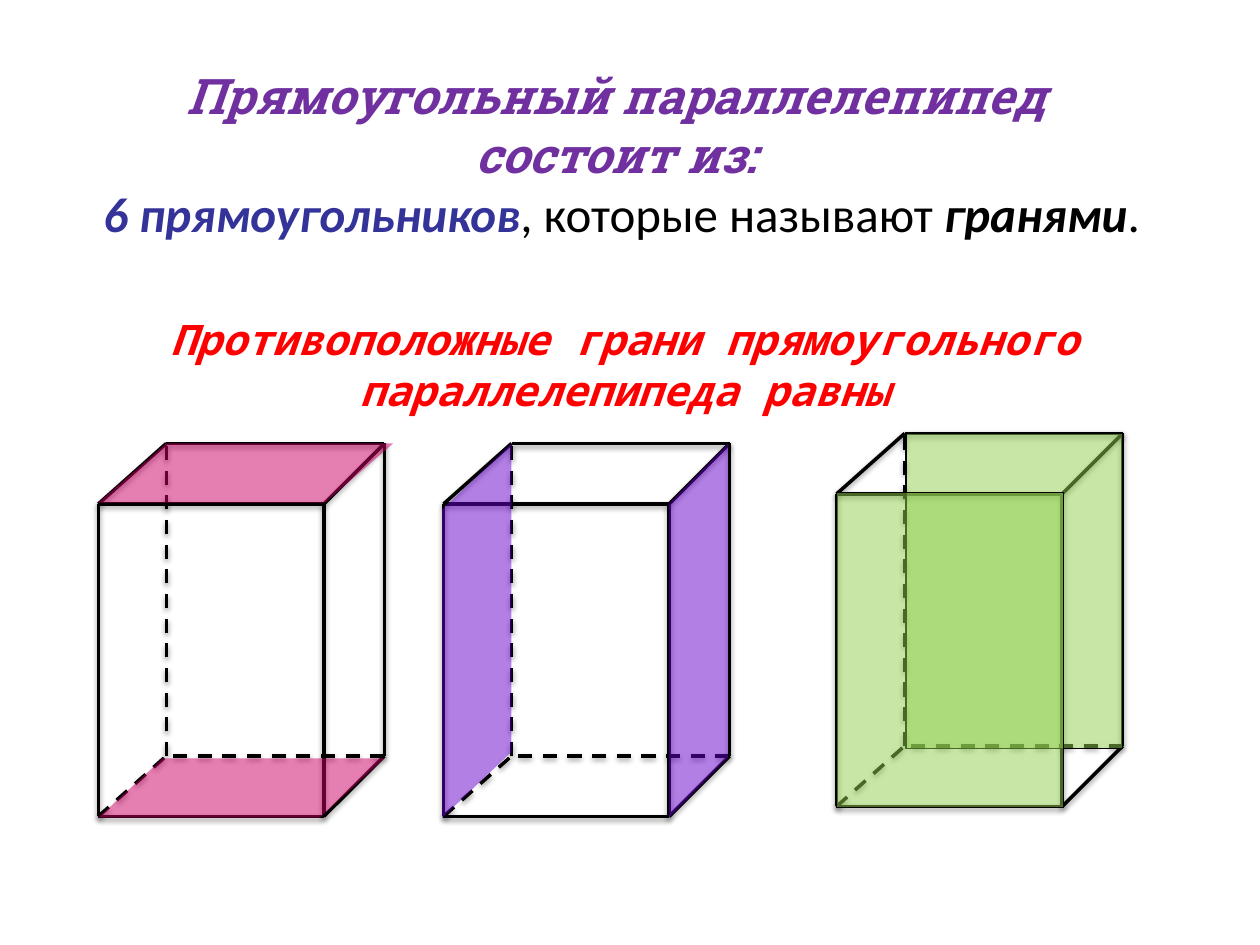
from lxml.etree import SubElement
from pptx import Presentation
from pptx.dml.color import RGBColor
from pptx.enum.dml import MSO_LINE
from pptx.enum.shapes import MSO_CONNECTOR, MSO_SHAPE
from pptx.enum.text import MSO_ANCHOR, MSO_AUTO_SIZE, PP_ALIGN
from pptx.oxml.ns import qn
from pptx.util import Inches, Pt

BLACK = RGBColor(0x00, 0x00, 0x00)
PURPLE = RGBColor(0x70, 0x30, 0xA0)
NAVY = RGBColor(0x33, 0x33, 0x99)
RED = RGBColor(0xFF, 0x00, 0x00)
PINK = RGBColor(0xCC, 0x00, 0x66)
VIOLET = RGBColor(0x66, 0x00, 0xCC)
GREEN = RGBColor(0x92, 0xD0, 0x50)

FRONT_W, FULL_W, SHIFT = 1.79, 2.27, 0.54
DEPTH, HEIGHT = 0.48, 2.48
VERTICES = {
    "front_top_left": (0, DEPTH),
    "front_top_right": (FRONT_W, DEPTH),
    "front_bottom_left": (0, DEPTH + HEIGHT),
    "front_bottom_right": (FRONT_W, DEPTH + HEIGHT),
    "back_top_left": (SHIFT, 0),
    "back_top_right": (FULL_W, 0),
    "back_bottom_left": (SHIFT, HEIGHT),
    "back_bottom_right": (FULL_W, HEIGHT),
}
SOLID_EDGES = [
    ("front_bottom_left", "front_top_left"),
    ("front_bottom_left", "front_bottom_right"),
    ("front_bottom_right", "front_top_right"),
    ("front_top_left", "front_top_right"),
    ("front_top_left", "back_top_left"),
    ("back_top_left", "back_top_right"),
    ("front_top_right", "back_top_right"),
    ("front_bottom_right", "back_bottom_right"),
    ("back_top_right", "back_bottom_right"),
]
HIDDEN_EDGES = [
    ("back_bottom_right", "back_bottom_left"),
    ("front_bottom_left", "back_bottom_left"),
    ("back_bottom_left", "back_top_left"),
]


def fill_text(sp, box, paragraphs):
    """Place a text shape and write centred paragraphs of (text, font values) runs."""
    sp.left, sp.top, sp.width, sp.height = map(Inches, box)
    tf = sp.text_frame
    frame_format = {"word_wrap": True, "vertical_anchor": MSO_ANCHOR.TOP,
                    "auto_size": MSO_AUTO_SIZE.SHAPE_TO_FIT_TEXT}
    for name, value in frame_format.items():
        setattr(tf, name, value)
    for i, runs in enumerate(paragraphs):
        p = tf.add_paragraph() if i else tf.paragraphs[0]
        p.alignment = PP_ALIGN.CENTER
        for text, color, font_format in runs:
            r = p.add_run()
            r.text = text
            r.font.color.rgb = color
            for name, value in font_format.items():
                setattr(r.font, name, value)


def add_heading(slide, box):
    """Write the title and the sentence on faces in the title placeholder."""
    plain = {"name": "Calibri", "size": Pt(28), "bold": False, "italic": False}
    strong = {**plain, "bold": True, "italic": True}
    fill_text(slide.shapes.title, box, [
        [("Прямоугольный параллелепипед состоит из:", PURPLE,
          {**strong, "name": "Roboto Slab"})],
        [(" ", BLACK, plain),
         ("6 прямоугольников", NAVY, strong),
         (", которые называют ", BLACK, plain),
         ("гранями", BLACK, strong),
         (".", BLACK, plain)],
    ])


def add_rule(slide, box):
    """Write the rule on opposite faces."""
    font_format = {"name": "Noto Sans Mono", "size": Pt(24), "bold": True, "italic": True}
    sp = slide.shapes.add_textbox(0, 0, 0, 0)
    fill_text(sp, box, [[
        ("Противоположные грани прямоугольного параллелепипеда равны", RED, font_format)]])


def add_shadow(sp):
    """Give a connector a soft black shadow below it."""
    effects = SubElement(sp._element.spPr, qn("a:effectLst"))
    shadow = SubElement(effects, qn("a:outerShdw"), blurRad=str(Pt(3.1)),
                        dist=str(Pt(1.6)), dir="5400000", rotWithShape="0")
    color = SubElement(shadow, qn("a:srgbClr"), val="000000")
    SubElement(color, qn("a:alpha"), val="38000")


def add_prism(slide, left, top):
    """Draw the twelve edges of a cuboid as one group."""
    group = slide.shapes.add_group_shape()
    for edges, dash in ((SOLID_EDGES, None), (HIDDEN_EDGES, MSO_LINE.DASH)):
        for start, end in edges:
            points = [Inches(origin + offset) for vertex in (start, end)
                      for origin, offset in zip((left, top), VERTICES[vertex])]
            edge = group.shapes.add_connector(MSO_CONNECTOR.STRAIGHT, *points)
            edge.line.color.rgb = BLACK
            edge.line.width = Pt(2)
            edge.line.dash_style = dash
            add_shadow(edge)


def add_face(slide, preset, box, color, slant=None, upright=False, outlined=False):
    """Add one half-transparent face, turned and mirrored when upright."""
    sp = slide.shapes.add_shape(preset, *map(Inches, box))
    sp.shadow.inherit = False
    sp.fill.solid()
    sp.fill.fore_color.rgb = color
    clr = sp._element.spPr.find(qn("a:solidFill")).find(qn("a:srgbClr"))
    SubElement(clr, qn("a:alpha"), val="50000")
    if slant:
        sp.adjustments[0] = slant
    if upright:
        sp.rotation = 90
        sp._element.spPr.find(qn("a:xfrm")).set("flipH", "1")
    if outlined:
        sp.line.color.rgb = BLACK
        sp.line.width = Pt(0.75)
    else:
        sp.line.fill.background()


def add_solid(slide, left, top, preset, color, faces, **options):
    """Draw a cuboid with a pair of coloured opposite faces."""
    add_prism(slide, left, top)
    for x, y, width, height, slant in faces:
        add_face(slide, preset, (left + x, top + y, width, height), color, slant, **options)


def main():
    """Build and save the slide."""
    prs = Presentation()
    prs.slide_width, prs.slide_height = Inches(10), Inches(7.5)
    slide = prs.slides.add_slide(prs.slide_layouts[5])
    add_heading(slide, (0.55, 0.47, 8.68, 1.51))
    add_rule(slide, (0.57, 2.44, 8.77, 0.51))
    add_solid(slide, 0.78, 3.52, MSO_SHAPE.PARALLELOGRAM, PINK,
              [(0, 2.5, 2.27, 0.47, 1.09), (0, 0, 2.34, 0.47, 1.15)])
    add_solid(slide, 3.52, 3.52, MSO_SHAPE.PARALLELOGRAM, VIOLET,
              [(0.54, 1.25, 2.97, 0.47, 1.02), (-1.22, 1.21, 2.97, 0.55, 0.95)],
              upright=True)
    add_solid(slide, 6.64, 3.44, MSO_SHAPE.RECTANGLE, GREEN,
              [(0.55, 0, 1.72, 2.5, None), (0, 0.47, 1.8, 2.5, None)], outlined=True)
    prs.save("out.pptx")


if __name__ == "__main__":
    main()
